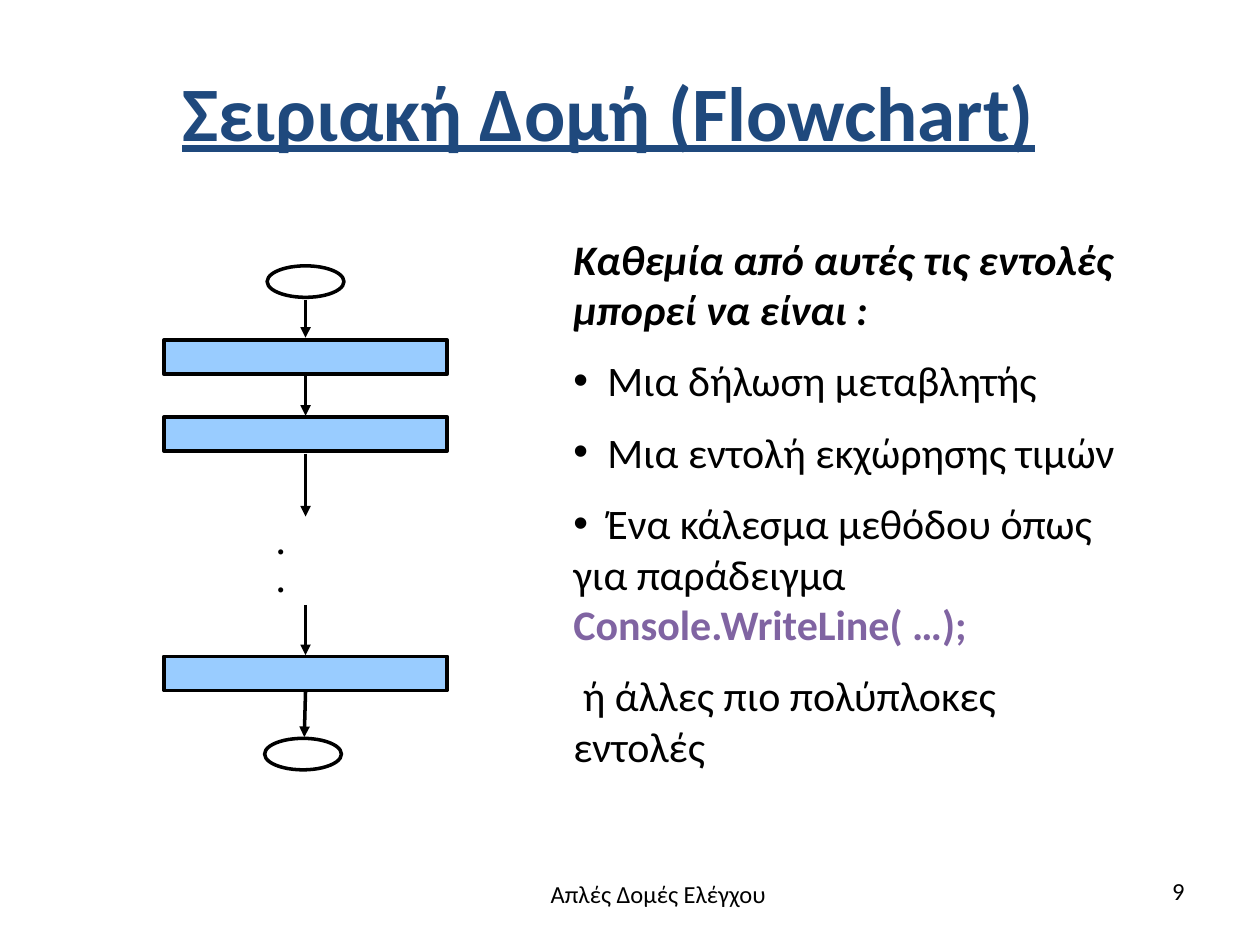
from lxml.etree import SubElement
from pptx import Presentation
from pptx.dml.color import RGBColor
from pptx.enum.shapes import MSO_CONNECTOR, MSO_SHAPE
from pptx.enum.text import MSO_ANCHOR, MSO_AUTO_SIZE, PP_ALIGN
from pptx.oxml.ns import qn
from pptx.util import Inches, Pt

BLACK, NAVY, PURPLE, SKY = "000000", "1F497D", "8064A2", "99CCFF"
LINE_WIDTH = Pt(2)


def colour(value):
    return RGBColor.from_string(value)


def inches(box):
    return [Inches(value) for value in box]


def add_span(para, text, shade=BLACK, **formats):
    span = para.add_run()
    span.text = text
    for name, value in ({"name": "Calibri"} | formats).items():
        setattr(span.font, name, value)
    span.font.color.rgb = colour(shade)


def place(holder, box):
    holder.left, holder.top, holder.width, holder.height = inches(box)
    holder.text_frame.auto_size = MSO_AUTO_SIZE.NONE
    return holder.text_frame


# Title
def add_title(page, box):
    frame = place(page.shapes.title, box)
    frame.vertical_anchor = MSO_ANCHOR.MIDDLE
    para = frame.paragraphs[0]
    para.alignment = PP_ALIGN.CENTER
    add_span(para, "Σειριακή Δομή (Flowchart)", NAVY,
             size=Pt(44), bold=True, underline=True)


# Explanation list
def set_bullet(para, bulleted):
    properties = para._p.get_or_add_pPr()
    properties.set("marL", "0")
    properties.set("indent", "0")
    if not bulleted:
        SubElement(properties, qn("a:buNone"))
        return
    SubElement(properties, qn("a:buChar"), char="•")
    tabs = SubElement(properties, qn("a:tabLst"))
    SubElement(tabs, qn("a:tab"), pos=str(Inches(0.27)), algn="l")


def add_explanation(page, box):
    frame = place(page.placeholders[1], box)
    frame.vertical_anchor = MSO_ANCHOR.TOP
    plain, strong = {"bold": False}, {"bold": True}
    items = [
        (False, [("Καθεμία από αυτές τις εντολές μπορεί να είναι :",
                  {"bold": True, "italic": True})]),
        (True, [("Μια δήλωση μεταβλητής", plain)]),
        (True, [("Μια εντολή εκχώρησης τιμών", plain)]),
        (True, [("Ένα κάλεσμα μεθόδου όπως για παράδειγμα ", plain),
                ("Console.WriteLine( …);", strong | {"shade": PURPLE})]),
        (False, [(" ή άλλες πιο πολύπλοκες εντολές", plain)]),
    ]
    for index, (bulleted, spans) in enumerate(items):
        para = frame.add_paragraph() if index else frame.paragraphs[0]
        set_bullet(para, bulleted)
        para.space_before = Pt(12 if index else 0)
        if bulleted:
            add_span(para, "\t", size=Pt(24))
        for text, formats in spans:
            add_span(para, text, size=Pt(24), **formats)


# Flowchart
def add_node(page, kind, box, fill=None):
    node = page.shapes.add_shape(kind, *inches(box))
    node.shadow.inherit = False
    if fill:
        node.fill.solid()
        node.fill.fore_color.rgb = colour(fill)
    else:
        node.fill.background()
    node.line.color.rgb = colour(BLACK)
    node.line.width = LINE_WIDTH


def add_arrow(page, start, end):
    arrow = page.shapes.add_connector(MSO_CONNECTOR.STRAIGHT, *inches(start + end))
    arrow.line.color.rgb = colour(BLACK)
    arrow.line.width = LINE_WIDTH
    SubElement(arrow.line._get_or_add_ln(), qn("a:tailEnd"), type="triangle")
    SubElement(arrow._element.spPr, qn("a:effectLst"))


def add_flowchart(page, box):
    left, top, width, height = box
    middle = left + width / 2
    oval_width, oval_height, step_height = 0.61, 0.25, 0.27

    # Start and end
    for x, y in ((middle, top), (middle - 0.02, top + height - oval_height)):
        add_node(page, MSO_SHAPE.OVAL,
                 (x - oval_width / 2, y, oval_width, oval_height))
    # Statements
    for offset in (0.59, 1.2, 3.1):
        add_node(page, MSO_SHAPE.RECTANGLE,
                 (left, top + offset, width, step_height), SKY)
    # Flow
    for start, end, drift in ((0.27, 0.57, 0), (0.87, 1.19, 0), (1.49, 1.99, 0),
                              (2.69, 3.09, 0), (3.38, 3.74, -0.01)):
        add_arrow(page, (middle, top + start), (middle + drift, top + end))
    # Omitted statements
    add_label(page, (left + 0.8, top + 1.99, 0.26, 0.7), ".\v.", PP_ALIGN.LEFT,
              wrap=False, name="Times New Roman", size=Pt(18), bold=True)


def add_label(page, box, text, alignment, wrap=True, **formats):
    frame = page.shapes.add_textbox(*inches(box)).text_frame
    frame.word_wrap = wrap
    para = frame.paragraphs[0]
    para.alignment = alignment
    for index, line in enumerate(text.split("\v")):
        if index:
            para.add_line_break()
        add_span(para, line, **formats)


# Footer and page number
def add_footer(page, box, number_box):
    add_label(page, box, "Απλές Δομές Ελέγχου", PP_ALIGN.CENTER, size=Pt(14))
    add_label(page, number_box, "9", PP_ALIGN.RIGHT, size=Pt(14))


def main():
    deck = Presentation()
    deck.slide_width, deck.slide_height = Inches(10), Inches(7.5)
    page = deck.slides.add_slide(deck.slide_layouts[1])
    add_title(page, (0.58, 0.25, 8.5, 1.25))
    add_flowchart(page, (1.3, 2.11, 2.25, 4))
    add_explanation(page, (4.45, 1.8, 4.67, 4.54))
    add_footer(page, (3.48, 6.93, 3.49, 0.55), (7.17, 6.9, 2.33, 0.4))
    deck.save("out.pptx")


if __name__ == "__main__":
    main()
